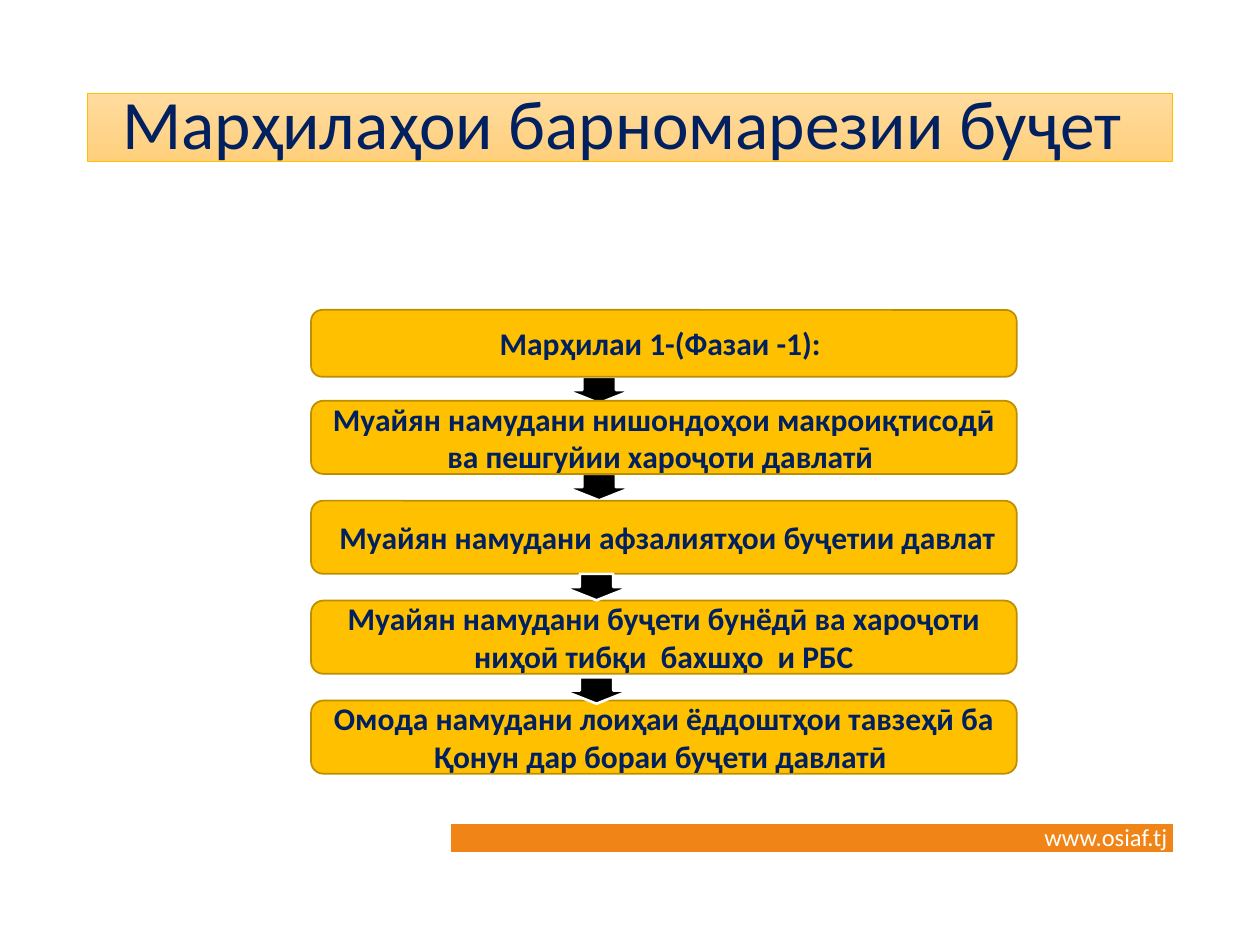
from dataclasses import dataclass

from lxml import etree
from pptx import Presentation
from pptx.dml.color import RGBColor
from pptx.enum.shapes import MSO_CONNECTOR, MSO_SHAPE
from pptx.enum.text import MSO_ANCHOR, PP_ALIGN
from pptx.oxml.ns import qn
from pptx.util import Pt

RECT = MSO_SHAPE.RECTANGLE
ROUNDED = MSO_SHAPE.ROUNDED_RECTANGLE
DOWN_ARROW = MSO_SHAPE.DOWN_ARROW
STRAIGHT = MSO_CONNECTOR.STRAIGHT
MIDDLE = MSO_ANCHOR.MIDDLE
CENTER = PP_ALIGN.CENTER
LEFT = PP_ALIGN.LEFT


@dataclass(frozen=True)
class Theme:
    font: str = "Calibri"
    navy: str = "002060"
    gold: str = "FFC000"
    gold_edge: str = "BD8E00"
    title_top: str = "FFDB9E"
    title_bottom: str = "FFD07C"
    orange: str = "F08416"
    white: str = "FFFFFF"
    black: str = "000000"
    title_size: float = 39.6
    step_size: float = 18
    footer_size: float = 14


THEME = Theme()

STEPS = [
    "Марҳилаи 1-(Фазаи -1): ",
    "Муайян намудани нишондоҳои макроиқтисодӣ ва пешгуйии хароҷоти давлатӣ ",
    " Муайян намудани афзалиятҳои буҷетии давлат",
    "Муайян намудани буҷети бунёдӣ ва хароҷоти ниҳоӣ тибқи  бахшҳо  и РБС",
    "Омода намудани лоиҳаи ёддоштҳои тавзеҳӣ ба Қонун дар бораи буҷети давлатӣ ",
]


def rgb(value):
    return RGBColor.from_string(value)


def add_box(s, kind, box, fill, line, width):
    sp = s.shapes.add_shape(kind, *map(Pt, box))
    sp.shadow.inherit = False
    sp.fill.solid()
    sp.fill.fore_color.rgb = rgb(fill)
    sp.line.color.rgb = rgb(line)
    sp.line.width = Pt(width)
    return sp


def add_text(sp, text, size, color, bold=False, align=CENTER):
    tf = sp.text_frame
    tf.vertical_anchor = MIDDLE
    p = tf.paragraphs[0]
    p.alignment = align
    r = p.add_run()
    r.text = text
    r.font.name = THEME.font
    r.font.size = Pt(size)
    r.font.bold = bold
    r.font.color.rgb = rgb(color)
    return p


def add_title(s, box):
    sp = add_box(s, RECT, box, THEME.title_top, THEME.gold, 0.5)
    sp.fill.gradient()
    sp.fill.gradient_angle = 270
    for stop, color in zip(sp.fill.gradient_stops, (THEME.title_top, THEME.title_bottom)):
        stop.color.rgb = rgb(color)
    p = add_text(sp, "Марҳилаҳои барномарезии буҷет ", THEME.title_size, THEME.navy)
    p.line_spacing = 0.9


def add_arrow(s, left, top):
    add_box(s, DOWN_ARROW, (left, top, 38.2, 15.1), THEME.black, THEME.white, 1.5)


def add_step(s, box, text):
    sp = add_box(s, ROUNDED, box, THEME.gold, THEME.gold_edge, 1)
    add_text(sp, text, THEME.step_size, THEME.navy, bold=True)


def add_flow(s, box):
    left, top, width, height = box
    head_height, step_height = 38.2, 41.8
    pitch = (height - 51.9 - step_height) / 3
    tops = [top] + [top + 51.9 + pitch * i for i in range(4)]
    heights = [head_height] + [step_height] * 4
    arrows = [
        (left + 145.5, tops[0] + head_height),
        (left + 145.5, tops[1] + step_height),
        (left + 144, tops[2] + step_height),
        (left + 144, tops[3] + step_height + 2),
    ]
    for arrow in arrows[:2]:
        add_arrow(s, *arrow)
    for y, h, text in zip(tops, heights, STEPS):
        add_step(s, (left, y, width, h), text)
    for arrow in arrows[2:]:
        add_arrow(s, *arrow)


def add_footer(s, box):
    left, top, width, height = box
    y = top + height / 2
    line = s.shapes.add_connector(STRAIGHT, Pt(left), Pt(y), Pt(left + width), Pt(y))
    line.line.color.rgb = rgb(THEME.orange)
    line.line.width = Pt(height)
    etree.SubElement(line.line._get_or_add_ln().getparent(), qn("a:effectLst"))
    sp = s.shapes.add_textbox(Pt(left + width - 80.6), Pt(y - 13), Pt(114.5), Pt(24.5))
    sp.text_frame.word_wrap = True
    add_text(sp, "www.osiaf.tj", THEME.footer_size, THEME.white, align=LEFT)


def main():
    prs = Presentation()
    prs.slide_width, prs.slide_height = Pt(720), Pt(540)
    s = prs.slides.add_slide(prs.slide_layouts[6])
    add_footer(s, (257.8, 470.8, 412.5, 16))
    add_title(s, (49.7, 53.3, 620.6, 38.9))
    add_flow(s, (177.8, 177.1, 403.2, 265))
    prs.save("out.pptx")


if __name__ == "__main__":
    main()
